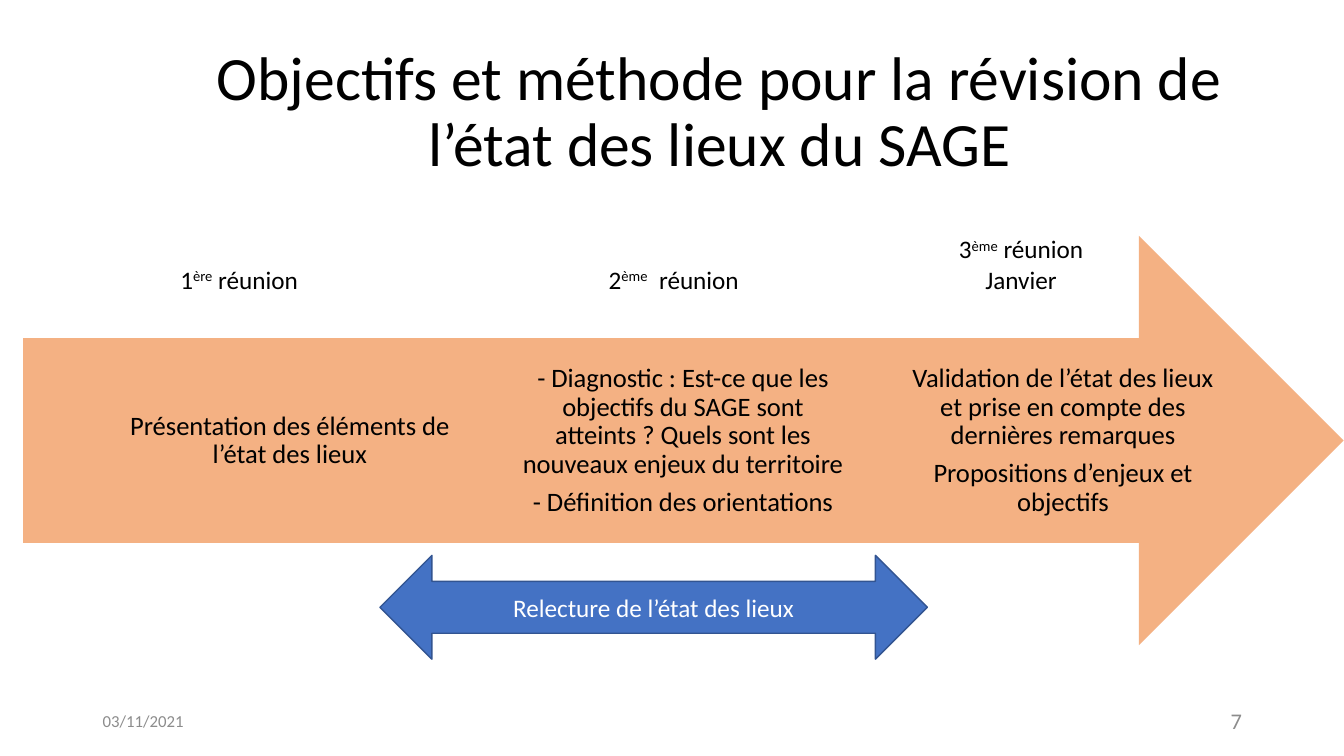
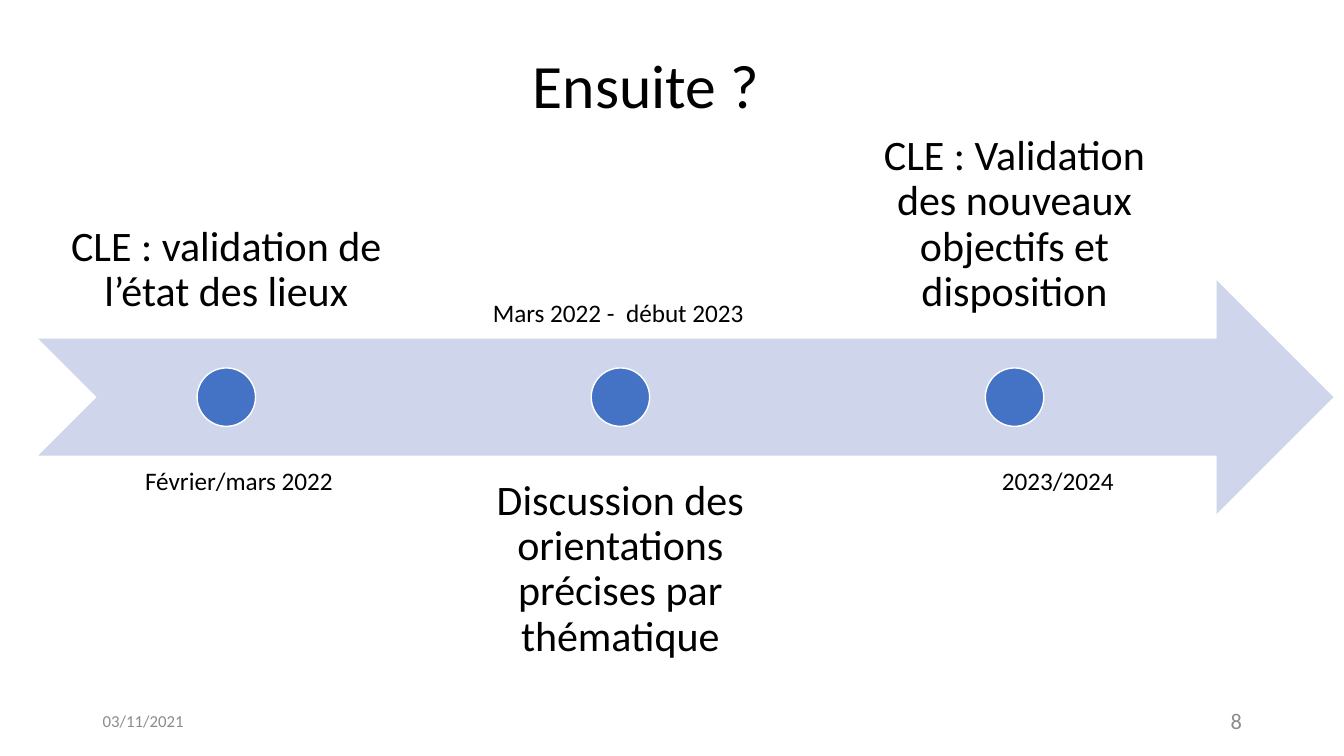
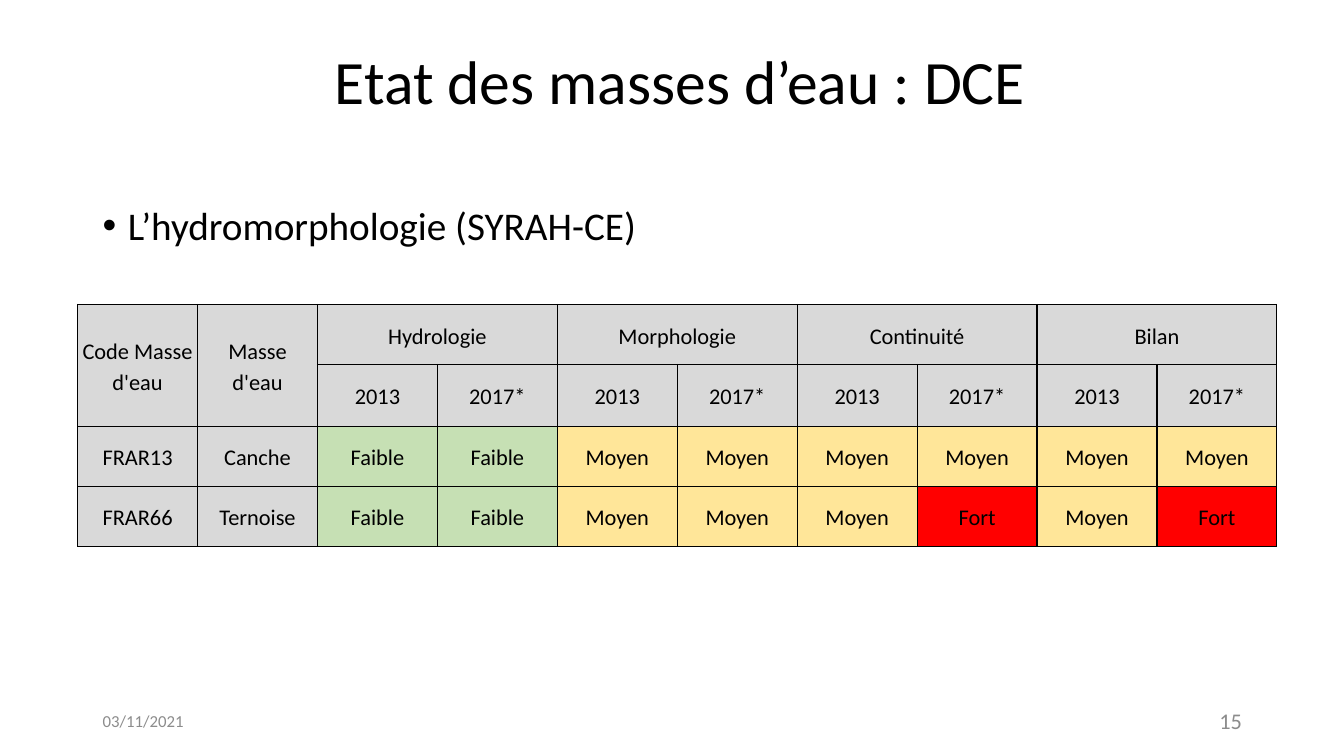
from lxml import etree
from pptx import Presentation
from pptx.dml.color import RGBColor
from pptx.enum.shapes import MSO_SHAPE
from pptx.enum.text import MSO_ANCHOR, MSO_AUTO_SIZE, PP_ALIGN
from pptx.oxml.ns import qn
from pptx.util import Inches, Pt

LEFT, CENTER, RIGHT = PP_ALIGN.LEFT, PP_ALIGN.CENTER, PP_ALIGN.RIGHT
TOP, MIDDLE, BOTTOM = MSO_ANCHOR.TOP, MSO_ANCHOR.MIDDLE, MSO_ANCHOR.BOTTOM
GROW = MSO_AUTO_SIZE.SHAPE_TO_FIT_TEXT
RIGHT_ARROW, DOUBLE_ARROW = MSO_SHAPE.RIGHT_ARROW, MSO_SHAPE.LEFT_RIGHT_ARROW
NOTCHED_ARROW, OVAL = MSO_SHAPE.NOTCHED_RIGHT_ARROW, MSO_SHAPE.OVAL

FONT, BULLET_FONT = "Calibri", "Arial"
BLACK, WHITE, GREY, BLUE = "000000", "FFFFFF", "8C8C8C", "4472C4"
ORANGE, PALE_BLUE, DARK_BLUE, HEADER = "F4B183", "CFD5EA", "325491", "D9D9D9"
LEVELS = {"Faible": "C6E0B4", "Moyen": "FFE699", "Fort": "FF0000"}
DATE = "03/11/2021"
INSETS = (0.1, 0.05, 0.1, 0.05)

MEETINGS = [
    ((1.69, 2.57, 1.68, 0.4), LEFT, [("1", "ère", " réunion")]),
    ((5.94, 2.57, 1.68, 0.4), LEFT, [("2", "ème", "  réunion")]),
    ((9.11, 2.27, 2.04, 0.71), CENTER, [("3", "ème", " réunion"), "Janvier"]),
]
STEPS = [
    (1.28, ["Présentation des éléments de l’état des lieux"]),
    (5.18, ["- Diagnostic : Est-ce que les objectifs du SAGE sont atteints ? "
            "Quels sont les nouveaux enjeux du territoire",
            "- Définition des orientations"]),
    (8.95, ["Validation de l’état des lieux et prise en compte des dernières remarques",
            "Propositions d’enjeux et objectifs"]),
]
MILESTONES = [
    ("CLE : validation de l’état des lieux", 1.04, BOTTOM,
     "Février/mars 2022", (1.34, 4.57, 2.58, 0.4)),
    ("Discussion des orientations précises par thématique", 4.52, TOP,
     "Mars 2022 -  début 2023", (4.79, 2.9, 2.89, 0.4)),
    ("CLE : Validation des nouveaux objectifs et disposition", 1.04, BOTTOM,
     "2023/2024", (9.84, 4.57, 2.58, 0.4)),
]
TOPICS = ["Hydrologie", "Morphologie", "Continuité", "Bilan"]
YEARS = ["2013", "2017*"]
ROWS = [
    ["Code Masse d'eau", "Masse d'eau"] + [t for topic in TOPICS for t in (topic, "")],
    ["", ""] + YEARS * len(TOPICS),
    ["FRAR13", "Canche"] + ["Faible"] * 2 + ["Moyen"] * 6,
    ["FRAR66", "Ternoise"] + ["Faible"] * 2 + ["Moyen"] * 3 + ["Fort", "Moyen", "Fort"],
]

prs = Presentation()
prs.slide_width, prs.slide_height = Inches(40 / 3), Inches(7.5)


def rgb(value):
    return RGBColor.from_string(value)


def write(tf, paragraphs, size, color=BLACK, bullet=False, **fmt):
    for i, runs in enumerate(paragraphs):
        p = tf.paragraphs[0] if i == 0 else tf.add_paragraph()
        if bullet:
            pPr = p._p.get_or_add_pPr()
            pPr.set("marL", str(Inches(0.25)))
            pPr.set("indent", str(Inches(-0.25)))
            etree.SubElement(pPr, qn("a:buFont"), typeface=BULLET_FONT)
            etree.SubElement(pPr, qn("a:buChar"), char="•")
        for name, value in fmt.items():
            setattr(p, name, value)
        for j, text in enumerate((runs,) if isinstance(runs, str) else runs):
            r = p.add_run()
            r.text = text
            r.font.name, r.font.size = FONT, Pt(size)
            r.font.color.rgb = rgb(color)
            if j % 2:
                r.font._element.set("baseline", "30000")


def set_insets(target, insets):
    for side, value in zip(("left", "top", "right", "bottom"), insets):
        setattr(target, f"margin_{side}", Inches(value))


def add_text(s, box, paragraphs, size, color=BLACK, anchor=TOP, insets=INSETS,
             grow=False, **fmt):
    tf = s.shapes.add_textbox(*map(Inches, box)).text_frame
    tf.word_wrap, tf.vertical_anchor = True, anchor
    if grow:
        tf.auto_size = GROW
    set_insets(tf, insets)
    write(tf, paragraphs, size, color, **fmt)


def add_shape(s, kind, box, fill, line=None):
    sp = s.shapes.add_shape(kind, *map(Inches, box))
    sp.shadow.inherit = False
    sp.fill.solid()
    sp.fill.fore_color.rgb = rgb(fill)
    if line:
        sp.line.color.rgb, sp.line.width = rgb(line), Pt(1)
    else:
        sp.line.fill.background()
    return sp


def add_slide(title, number, left, top, width=11.5):
    s = prs.slides.add_slide(prs.slide_layouts[6])
    add_text(s, (left, top, width, 1.45), [title], 44, anchor=MIDDLE,
             alignment=CENTER, line_spacing=0.9)
    add_text(s, (0.92, 6.95, 3, 0.4), [DATE], 12, GREY, MIDDLE)
    add_text(s, (9.42, 6.95, 3, 0.4), [str(number)], 16, GREY, MIDDLE, alignment=RIGHT)
    return s


def add_diagram_text(s, box, paragraphs, size, anchor, insets):
    add_text(s, box, paragraphs, size, anchor=anchor, insets=insets, alignment=CENTER,
             line_spacing=0.9, space_after=Pt(size * 0.35))


def add_borders(cell):
    tcPr = cell._tc.get_or_add_tcPr()
    for side in "LRTB":
        ln = etree.SubElement(tcPr, qn(f"a:ln{side}"), w=str(Pt(1)))
        fill = etree.SubElement(ln, qn("a:solidFill"))
        etree.SubElement(fill, qn("a:srgbClr"), val=BLACK)


def build_method():
    s = add_slide("Objectifs et méthode pour la révision de l’état des lieux du SAGE",
                  7, 1.87, 0.4, 10.54)
    add_shape(s, RIGHT_ARROW, (0.23, 2.34, 13.1, 4.06), ORANGE)
    for left, paragraphs in STEPS:
        add_diagram_text(s, (left, 3.36, 3.19, 2.03), paragraphs, 19, MIDDLE,
                         (0, 0.21, 0, 0.21))
    for box, align, paragraphs in MEETINGS:
        add_text(s, box, paragraphs, 18, grow=True, alignment=align)
    sp = add_shape(s, DOUBLE_ARROW, (3.77, 5.51, 5.43, 1.03), BLUE, DARK_BLUE)
    sp.text_frame.vertical_anchor = MIDDLE
    write(sp.text_frame, ["Relecture de l’état des lieux"], 18, WHITE, alignment=CENTER)


def build_timeline():
    s = add_slide("Ensuite ?", 8, 0.66, 0.15)
    left, top, height = 0.38, 2.78, 2.32
    width, pitch, dot = 3.73, 3.91, 0.58
    add_shape(s, NOTCHED_ARROW, (left, top, 12.85, height), PALE_BLUE)
    for i, (label, label_top, anchor, date, date_box) in enumerate(MILESTONES):
        x = left + i * pitch
        add_diagram_text(s, (x, label_top, width, height), [label], 30, anchor, (0.23,) * 4)
        add_shape(s, OVAL, (x + (width - dot) / 2, top + (height - dot) / 2, dot, dot),
                  BLUE, WHITE)
        add_text(s, date_box, [date], 18, grow=True)


def build_table():
    s = add_slide("Etat des masses d’eau : DCE", 15, 1, 0.11)
    add_text(s, (0.92, 2, 11.5, 0.59), ["L’hydromorphologie (SYRAH-CE)"], 28,
             bullet=True, line_spacing=0.9)
    table = s.shapes.add_table(len(ROWS), len(ROWS[0]), Inches(0.77), Inches(3.02),
                               Inches(11.9), Inches(2.38)).table
    table.first_row = table.horz_banding = False
    for i, row in enumerate(ROWS):
        for j, text in enumerate(row):
            cell = table.cell(i, j)
            add_borders(cell)
            cell.fill.solid()
            cell.fill.fore_color.rgb = rgb(LEVELS.get(text, HEADER))
            cell.vertical_anchor = MIDDLE
            set_insets(cell, (0.04, 0, 0.04, 0))
            if text:
                write(cell.text_frame, [text], 16, alignment=CENTER, line_spacing=1.15,
                      space_after=Pt(10))
    for j in range(2):
        table.cell(0, j).merge(table.cell(1, j))
    for j in range(2, len(ROWS[0]), 2):
        table.cell(0, j).merge(table.cell(0, j + 1))


def main():
    build_method()
    build_timeline()
    build_table()
    prs.save("out.pptx")


if __name__ == "__main__":
    main()
